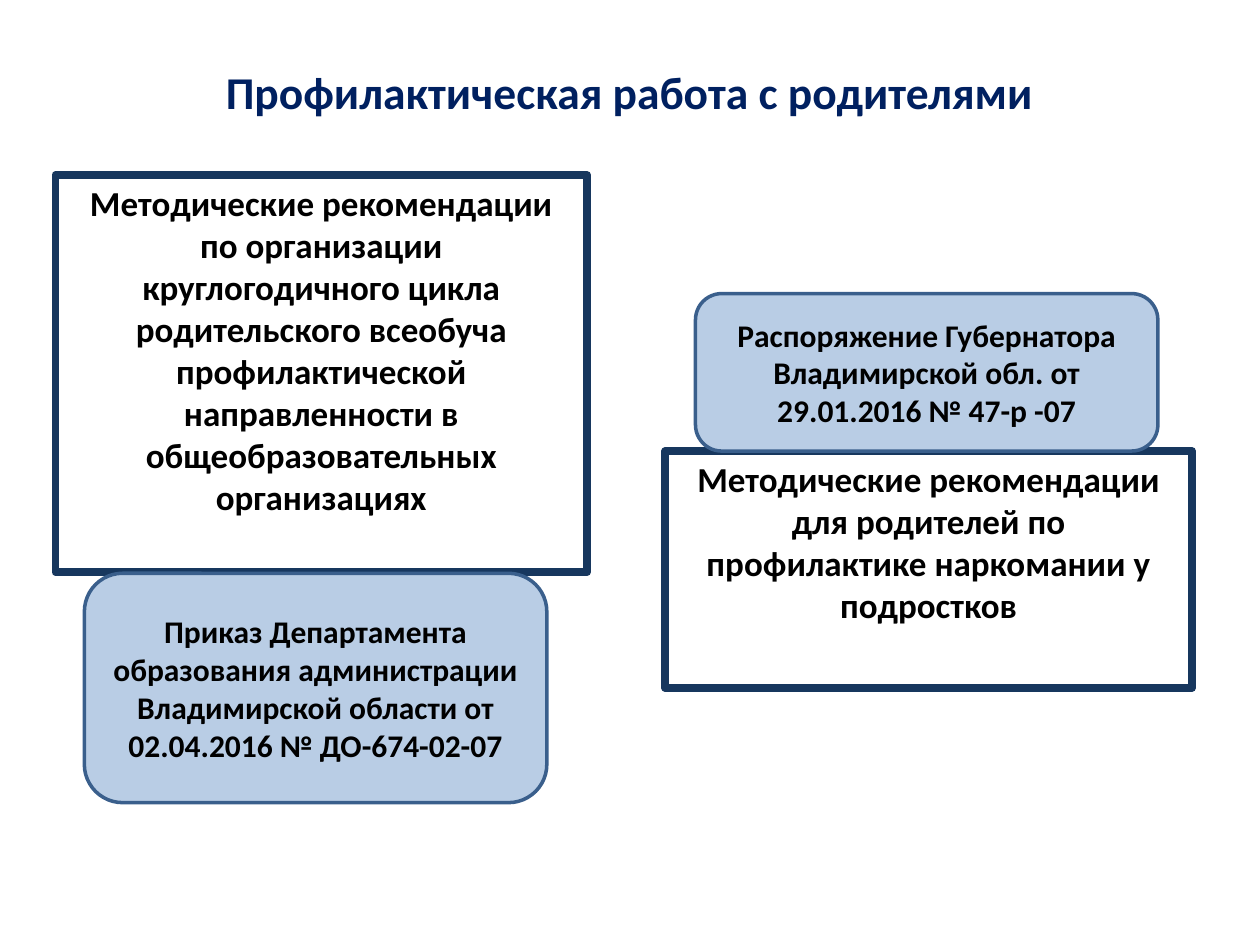
from dataclasses import dataclass

from pptx import Presentation
from pptx.dml.color import RGBColor
from pptx.enum import shapes, text
from pptx.util import Inches, Pt


@dataclass(frozen=True)
class Theme:
    """Colours, type sizes and line widths of the slide."""
    font: str = "Calibri"
    title: str = "002060"
    ink: str = "000000"
    frame: str = "17375E"
    card_fill: str = "B9CDE5"
    card_line: str = "3A5F8C"
    title_size: float = 26
    body_size: float = 20
    card_size: float = 18
    frame_width: float = 4.5
    card_width: float = 2


THEME = Theme()


def place(sp, box):
    """Move a shape to a box of left, top, width and height in inches."""
    sp.left, sp.top, sp.width, sp.height = map(Inches, box)


def outline(sp, color, width):
    """Give a shape a solid outline."""
    sp.line.color.rgb = RGBColor.from_string(color)
    sp.line.width = Pt(width)


def write(sp, words, size, color, anchor):
    """Write one bold centred paragraph without a bullet."""
    tf = sp.text_frame
    tf.word_wrap = True
    tf.auto_size = text.MSO_AUTO_SIZE.NONE
    tf.vertical_anchor = anchor
    p = tf.paragraphs[0]
    p.alignment = text.PP_ALIGN.CENTER
    p.space_before = Pt(0)
    pPr = p._p.get_or_add_pPr()
    pPr.set("marL", "0")
    pPr.set("indent", "0")
    pPr.get_or_change_to_buNone() if hasattr(pPr, "get_or_change_to_buNone") else pPr.append(
        pPr.makeelement("{http://schemas.openxmlformats.org/drawingml/2006/main}buNone", {}))
    r = p.add_run()
    r.text = words
    r.font.name = THEME.font
    r.font.size = Pt(size)
    r.font.bold = True
    r.font.color.rgb = RGBColor.from_string(color)


def add_title(s, box, words):
    """Fill the title placeholder."""
    sp = s.shapes.title
    place(sp, box)
    write(sp, words, THEME.title_size, THEME.title, text.MSO_ANCHOR.MIDDLE)


def add_guideline(sp, box, words):
    """Fill a body placeholder as a framed guideline."""
    place(sp, box)
    outline(sp, THEME.frame, THEME.frame_width)
    write(sp, words, THEME.body_size, THEME.ink, text.MSO_ANCHOR.TOP)


def add_order(s, box, words):
    """Add a rounded card naming the order behind a guideline."""
    sp = s.shapes.add_shape(shapes.MSO_SHAPE.ROUNDED_RECTANGLE, *map(Inches, box))
    sp.shadow.inherit = False
    sp.fill.solid()
    sp.fill.fore_color.rgb = RGBColor.from_string(THEME.card_fill)
    outline(sp, THEME.card_line, THEME.card_width)
    write(sp, words, THEME.card_size, THEME.ink, text.MSO_ANCHOR.MIDDLE)


def main():
    """Build and save the slide."""
    prs = Presentation()
    prs.slide_width, prs.slide_height = Inches(10), Inches(7.5)
    s = prs.slides.add_slide(prs.slide_layouts.get_by_name("Two Content"))
    add_title(s, (0.5, 0.29, 9, 0.87), "Профилактическая работа с родителями")
    add_guideline(
        s.placeholders[1], (0.44, 1.39, 4.22, 3.15),
        "Методические рекомендации по организации круглогодичного цикла "
        "родительского всеобуча профилактической направленности в "
        "общеобразовательных организациях")
    add_guideline(
        s.placeholders[2], (5.28, 3.58, 4.18, 1.88),
        "Методические рекомендации для родителей по профилактике "
        "наркомании у подростков")
    add_order(
        s, (0.67, 4.55, 3.67, 1.82),
        "Приказ Департамента образования администрации Владимирской "
        "области от 02.04.2016 № ДО-674-02-07")
    add_order(
        s, (5.52, 2.33, 3.67, 1.25),
        "Распоряжение Губернатора Владимирской обл. от 29.01.2016 № 47-р -07")
    prs.save("out.pptx")


if __name__ == "__main__":
    main()
